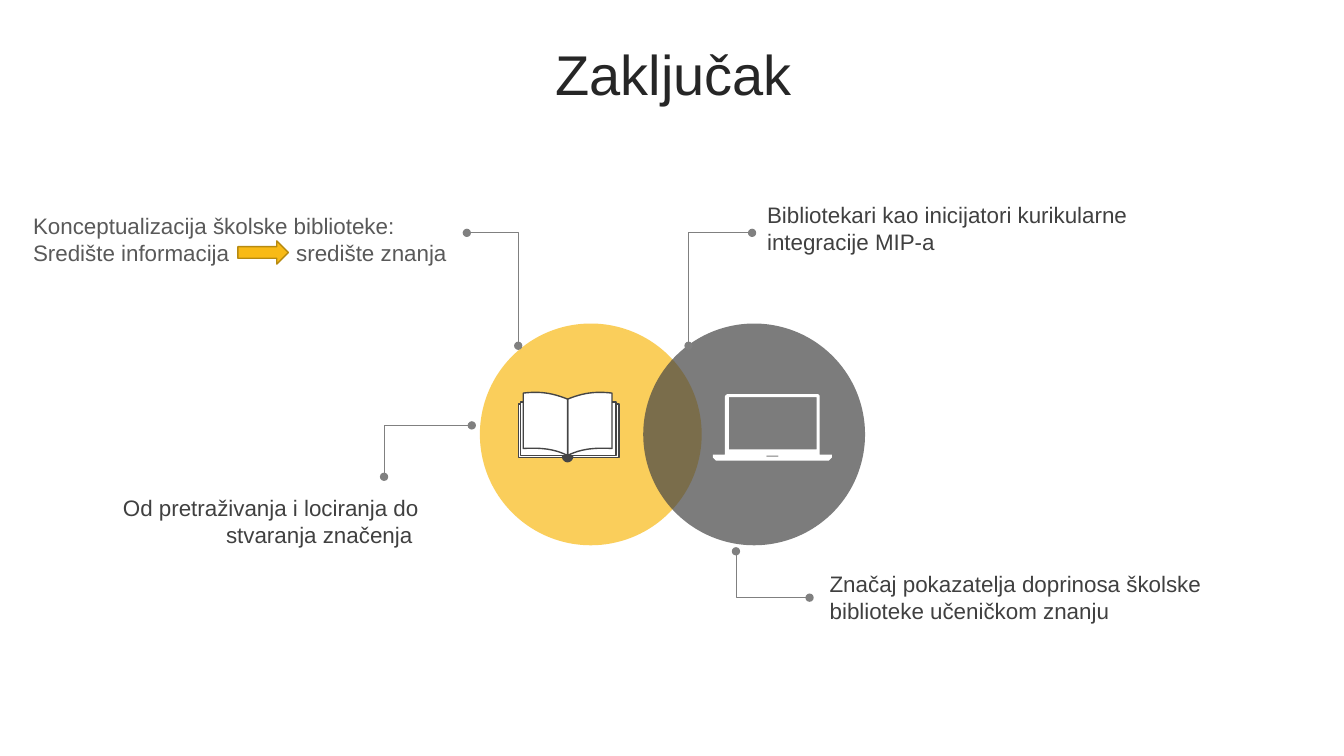
from lxml.etree import SubElement
from pptx import Presentation
from pptx.dml.color import RGBColor
from pptx.enum.shapes import MSO_CONNECTOR as Connector, MSO_SHAPE as Preset
from pptx.enum.text import MSO_ANCHOR as Anchor, PP_ALIGN as Align
from pptx.oxml.ns import qn
from pptx.util import Inches, Pt

COLORS = {
    "title": "262626",
    "text": "404040",
    "concept": "595959",
    "yellow": "F8BA16",
    "yellow_edge": "B78A10",
    "dark": "454545",
    "line": "808080",
    "white": "FFFFFF",
}


def color(name):
    return RGBColor.from_string(COLORS[name])


def place(item, left, top, width, height):
    item.left, item.top = Inches(left), Inches(top)
    item.width, item.height = Inches(width), Inches(height)


def write(frame, text, size=16, ink="text", align=Align.LEFT,
          anchor=Anchor.TOP, spacing=None, before=None, tab=None):
    frame.word_wrap = True
    frame.vertical_anchor = anchor
    for index, line in enumerate(text.split("\n")):
        para = frame.add_paragraph() if index else frame.paragraphs[0]
        para.alignment = align
        if spacing:
            para.line_spacing = spacing
        if before:
            para.space_before = Pt(before)
        if tab and "\t" in line:
            stops = SubElement(para._p.get_or_add_pPr(), qn("a:tabLst"))
            SubElement(stops, qn("a:tab"), pos=str(Inches(tab)), algn="l")
        span = para.add_run()
        span.text = line
        span.font.size = Pt(size)
        span.font.name = "Arial"
        span.font.color.rgb = color(ink)


def add_text(page, area, text, **style):
    box = page.shapes.add_textbox(*map(Inches, area))
    write(box.text_frame, text, **style)


def paint(shape, fill, edge=None, alpha=None):
    shape.shadow.inherit = False
    shape.fill.solid()
    shape.fill.fore_color.rgb = color(fill)
    if alpha:
        tone = shape.fill._xPr.find(qn("a:solidFill"))[0]
        SubElement(tone, qn("a:alpha"), val=str(alpha * 1000))
    if edge:
        shape.line.color.rgb = color(edge)
        shape.line.width = Pt(1)
    else:
        shape.line.fill.background()


def add_preset(shapes, preset, area, fill, **style):
    paint(shapes.add_shape(preset, *map(Inches, area)), fill, **style)


def curve(start, first, second, end, steps=12):
    points = []
    for step in range(steps + 1):
        t = step / steps
        u = 1 - t
        weights = (u ** 3, 3 * u * u * t, 3 * u * t * t, t ** 3)
        points.append(tuple(
            sum(weight * value for weight, value in zip(weights, values))
            for values in zip(start, first, second, end)))
    return points


def add_outline(shapes, contours, fill, **style):
    scaled = [[(Inches(x), Inches(y)) for x, y in points]
              for points in contours]
    builder = shapes.build_freeform(*scaled[0][0])
    for index, points in enumerate(scaled):
        if index:
            builder.move_to(*points[0])
        builder.add_line_segments(points[1:], close=True)
    paint(builder.convert_to_shape(), fill, **style)


def add_elbow(page, start, end):
    elbow = page.shapes.add_connector(
        Connector.ELBOW, *map(Inches, start + end))
    elbow.line.color.rgb = color("line")
    elbow.line.width = Pt(0.5)
    outline = elbow.line._get_or_add_ln()
    for tag in ("a:headEnd", "a:tailEnd"):
        SubElement(outline, qn(tag), type="oval")
    properties = elbow._element.spPr
    SubElement(properties, qn("a:effectLst"))
    adjustments = properties.find(qn("a:prstGeom")).get_or_add_avLst()
    SubElement(adjustments, qn("a:gd"), name="adj1", fmla="val 100000")


def add_book(page):
    shapes = page.shapes.add_group_shape().shapes
    for area in ((5.14, 4.01, 1, 0.53), (5.16, 3.99, 0.95, 0.53)):
        add_preset(shapes, Preset.RECTANGLE, area, "white", edge="dark")
    spine = 5.63
    right_leaf = (
        curve((spine, 3.96), (5.78, 3.9), (5.9, 3.88), (6.07, 3.9))
        + curve((6.07, 4.45), (5.92, 4.44), (5.76, 4.45), (spine, 4.52)))
    left_leaf = [(2 * spine - x, y) for x, y in right_leaf]
    for leaf in (right_leaf, left_leaf):
        add_outline(shapes, [leaf], "white", edge="dark")
    knob = (curve((5.68, 4.53), (5.68, 4.55), (5.66, 4.58), (spine, 4.58))
            + curve((spine, 4.58), (5.6, 4.58), (5.58, 4.55), (5.58, 4.53)))
    add_outline(shapes, [knob], "dark", edge="dark")


def rectangle(left, top, right, bottom):
    return [(left, top), (left, bottom), (right, bottom), (right, top)]


def add_laptop(page):
    body = (
        curve((8.1, 3.91), (8.12, 3.91), (8.13, 3.92), (8.13, 3.94))
        + [(8.13, 4.51), (8.25, 4.51), (8.25, 4.54), (8.22, 4.57),
           (7.1, 4.57), (7.07, 4.54), (7.07, 4.51), (7.19, 4.51)]
        + curve((7.19, 3.94), (7.19, 3.92), (7.21, 3.91), (7.22, 3.91)))
    screen = rectangle(7.23, 3.94, 8.1, 4.46)
    notch = rectangle(7.6, 4.52, 7.72, 4.53)
    add_outline(page.shapes, [body, screen, notch], "white")


def main():
    deck = Presentation()
    deck.slide_width, deck.slide_height = Inches(13.33), Inches(7.5)
    page = deck.slides.add_slide(deck.slide_layouts[5])

    title = page.shapes.title
    place(title, 0.35, 0.37, 12.66, 0.79)
    write(title.text_frame, "Zaključak", size=40, ink="title",
          align=Align.CENTER, anchor=Anchor.MIDDLE, spacing=0.9, before=10)

    circles = page.shapes.add_group_shape().shapes
    for left, fill in ((4.76, "yellow"), (6.38, "dark")):
        add_preset(circles, Preset.OVAL, (left, 3.21, 2.2, 2.2), fill,
                   alpha=70)

    for start, end in (((4.63, 2.31), (5.14, 3.43)),
                       ((7.46, 2.31), (6.83, 3.43)),
                       ((4.68, 4.22), (3.81, 4.73)),
                       ((8.03, 5.93), (7.3, 5.47))):
        add_elbow(page, start, end)

    add_text(page, (7.51, 1.95, 4.53, 0.91),
             "Bibliotekari kao inicijatori kurikularne integracije MIP-a")
    add_text(page, (8.13, 5.61, 4.51, 0.64),
             "Značaj pokazatelja doprinosa školske biblioteke "
             "učeničkom znanju")
    add_text(page, (0.42, 4.85, 3.83, 0.84),
             "Od pretraživanja i lociranja do stvaranja značenja ",
             align=Align.RIGHT)
    add_text(page, (0.23, 2.06, 4.37, 0.64),
             "Konceptualizacija školske biblioteke:\n"
             "Središte informacija\tsredište znanja",
             ink="concept", tab=2.61)

    add_book(page)
    add_laptop(page)
    add_preset(page.shapes, Preset.RIGHT_ARROW, (2.36, 2.39, 0.5, 0.23),
               "yellow", edge="yellow_edge")
    deck.save("out.pptx")


if __name__ == "__main__":
    main()
